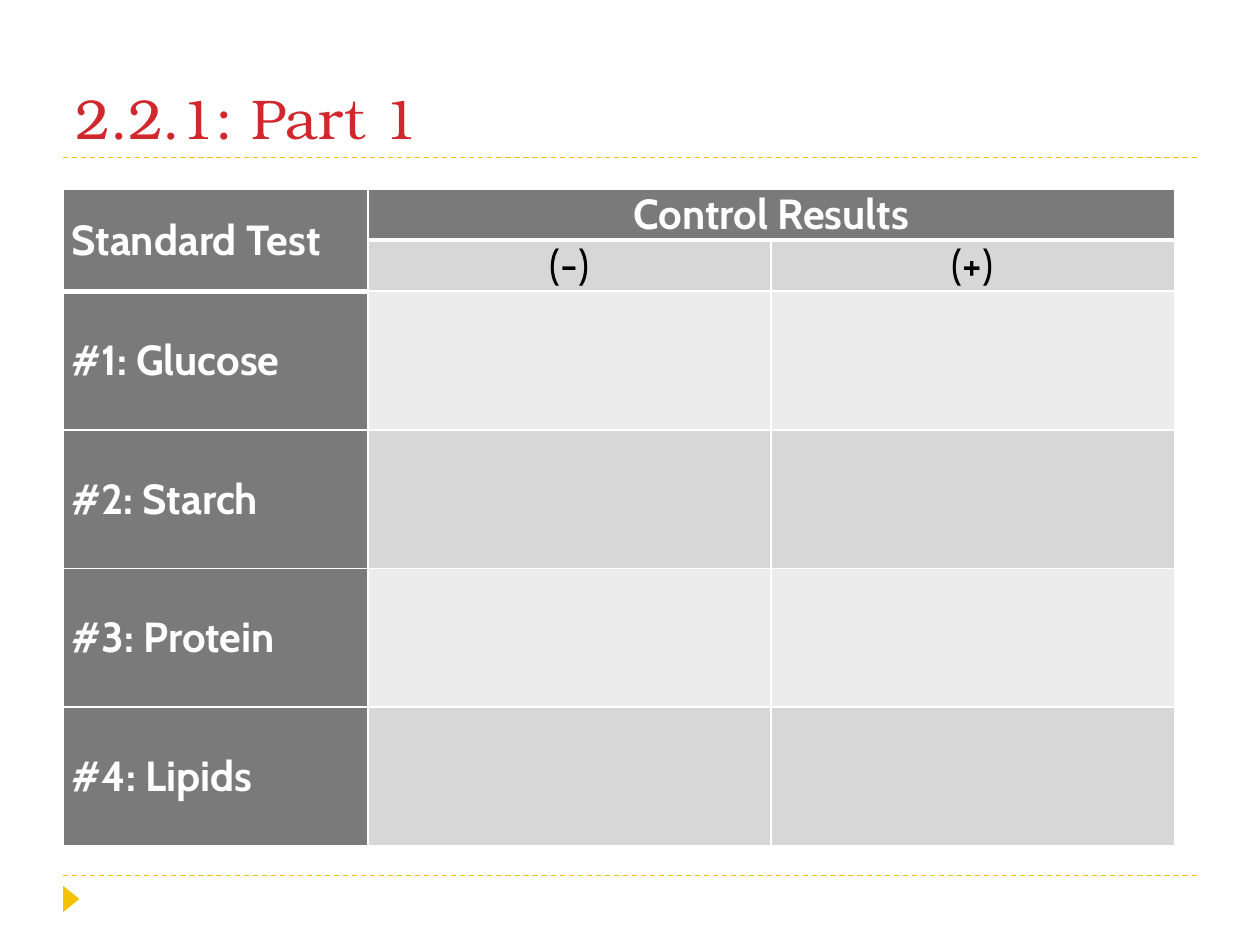
from lxml.etree import SubElement
from pptx import Presentation
from pptx.dml.color import RGBColor
from pptx.enum.dml import MSO_LINE
from pptx.enum.shapes import MSO_CONNECTOR as Connector, MSO_SHAPE as Shape
from pptx.enum.text import MSO_ANCHOR as Anchor, PP_ALIGN as Align
from pptx.oxml.ns import qn
from pptx.util import Inches, Pt

RED, GOLD, WHITE, BLACK = "D1282E", "F5C201", "FFFFFF", "000000"
HEADER, BAND_DARK, BAND_LIGHT = "7A7A7A", "D7D7D7", "ECECEC"
TITLE_FORMAT = {"name": "TeX Gyre Bonum", "size": Pt(32), "bold": False}
HEADING_FORMAT = {"name": "Cabin", "size": Pt(24), "bold": True}
SIGN_FORMAT = {**HEADING_FORMAT, "bold": False}
CELL_MARGINS = {"margin_left": Inches(0.07), "margin_right": Inches(0.07),
                "margin_top": 0, "margin_bottom": 0}
COLUMN_WIDTHS = [2.42, 3.2, 3.2]
ROW_HEIGHTS = [0.4, 0.4, 1.1, 1.1, 1.1, 1.1]
TESTS = ["#1: Glucose", "#2: Starch", "#3: Protein", "#4: Lipids"]
HEAVY_BOTTOMS = {(0, 1), (0, 2), (1, 0)}


def color(value):
    return RGBColor.from_string(value)


def set_attributes(target, values):
    for name, value in values.items():
        setattr(target, name, value)


def write_text(frame, text, font_format, font_color, align=Align.LEFT):
    paragraph = frame.paragraphs[0]
    paragraph.alignment = align
    run = paragraph.add_run()
    run.text = text
    set_attributes(run.font, font_format)
    run.font.color.rgb = color(font_color)
    return paragraph


def add_title(slide, text, left, top, width, height):
    title = slide.shapes.title
    set_attributes(title, {"left": Inches(left), "top": Inches(top),
                           "width": Inches(width), "height": Inches(height)})
    title.text_frame.vertical_anchor = Anchor.BOTTOM
    write_text(title.text_frame, text, TITLE_FORMAT, RED)


def add_rule(slide, left, top, width):
    rule = slide.shapes.add_connector(
        Connector.STRAIGHT, Inches(left), Inches(top), Inches(left + width), Inches(top))
    set_attributes(rule.line, {"width": Pt(0.75), "dash_style": MSO_LINE.DASH})
    rule.line.color.rgb = color(GOLD)
    SubElement(rule._element.spPr, qn("a:effectLst"))


def add_marker(slide, left, top, width, height):
    marker = slide.shapes.add_shape(
        Shape.ISOSCELES_TRIANGLE, Inches(left), Inches(top), Inches(width), Inches(height))
    marker.rotation = 90
    marker.shadow.inherit = False
    marker.fill.solid()
    marker.fill.fore_color.rgb = color(GOLD)
    marker.line.fill.background()


def add_borders(cell, row, column):
    heavy_edges = {"lnT": (row - 1, column) in HEAVY_BOTTOMS,
                   "lnB": (row, column) in HEAVY_BOTTOMS}
    properties = cell._tc.get_or_add_tcPr()
    for edge in ("lnL", "lnR", "lnT", "lnB"):
        width = Pt(3 if heavy_edges.get(edge) else 1)
        border = SubElement(properties, qn(f"a:{edge}"), w=str(width))
        fill = SubElement(border, qn("a:solidFill"))
        SubElement(fill, qn("a:srgbClr"), val=WHITE)


def cell_fill(row, column):
    if row == 0 or column == 0:
        return HEADER
    return BAND_DARK if row % 2 else BAND_LIGHT


def write_cell(cell, text, font_format, font_color, align=Align.LEFT, anchor=Anchor.MIDDLE):
    cell.vertical_anchor = anchor
    paragraph = write_text(cell.text_frame, text, font_format, font_color, align)
    paragraph.space_after = Pt(6)


def add_results_table(slide, left, top):
    frame = slide.shapes.add_table(
        len(ROW_HEIGHTS), len(COLUMN_WIDTHS), Inches(left), Inches(top),
        Inches(sum(COLUMN_WIDTHS)), Inches(sum(ROW_HEIGHTS)))
    table = frame.table
    for column, width in zip(table.columns, COLUMN_WIDTHS):
        column.width = Inches(width)
    for row, height in zip(table.rows, ROW_HEIGHTS):
        row.height = Inches(height)
    for row in range(len(ROW_HEIGHTS)):
        for column in range(len(COLUMN_WIDTHS)):
            cell = table.cell(row, column)
            add_borders(cell, row, column)
            set_attributes(cell, CELL_MARGINS)
            cell.fill.solid()
            cell.fill.fore_color.rgb = color(cell_fill(row, column))

    table.cell(0, 0).merge(table.cell(1, 0))
    table.cell(0, 1).merge(table.cell(0, 2))
    write_cell(table.cell(0, 0), "Standard Test", HEADING_FORMAT, WHITE)
    write_cell(table.cell(0, 1), "Control Results", HEADING_FORMAT, WHITE,
               Align.CENTER, Anchor.TOP)
    for column, sign in enumerate(["(-)", "(+)"], start=1):
        write_cell(table.cell(1, column), sign, SIGN_FORMAT, BLACK, Align.CENTER, Anchor.TOP)
    for row, test in enumerate(TESTS, start=2):
        write_cell(table.cell(row, 0), test, HEADING_FORMAT, WHITE)


def main():
    presentation = Presentation()
    presentation.slide_width = Inches(10)
    presentation.slide_height = Inches(7.5)
    slide = presentation.slides.add_slide(presentation.slide_layouts[5])
    for top in (6.95, 1.25):
        add_rule(slide, 0.5, top, 9)
    add_marker(slide, 0.46, 7.07, 0.21, 0.13)
    add_title(slide, "2.2.1: Part 1", 0.5, 0.25, 9, 1)
    add_results_table(slide, 0.5, 1.5)
    presentation.save("out.pptx")


if __name__ == "__main__":
    main()
